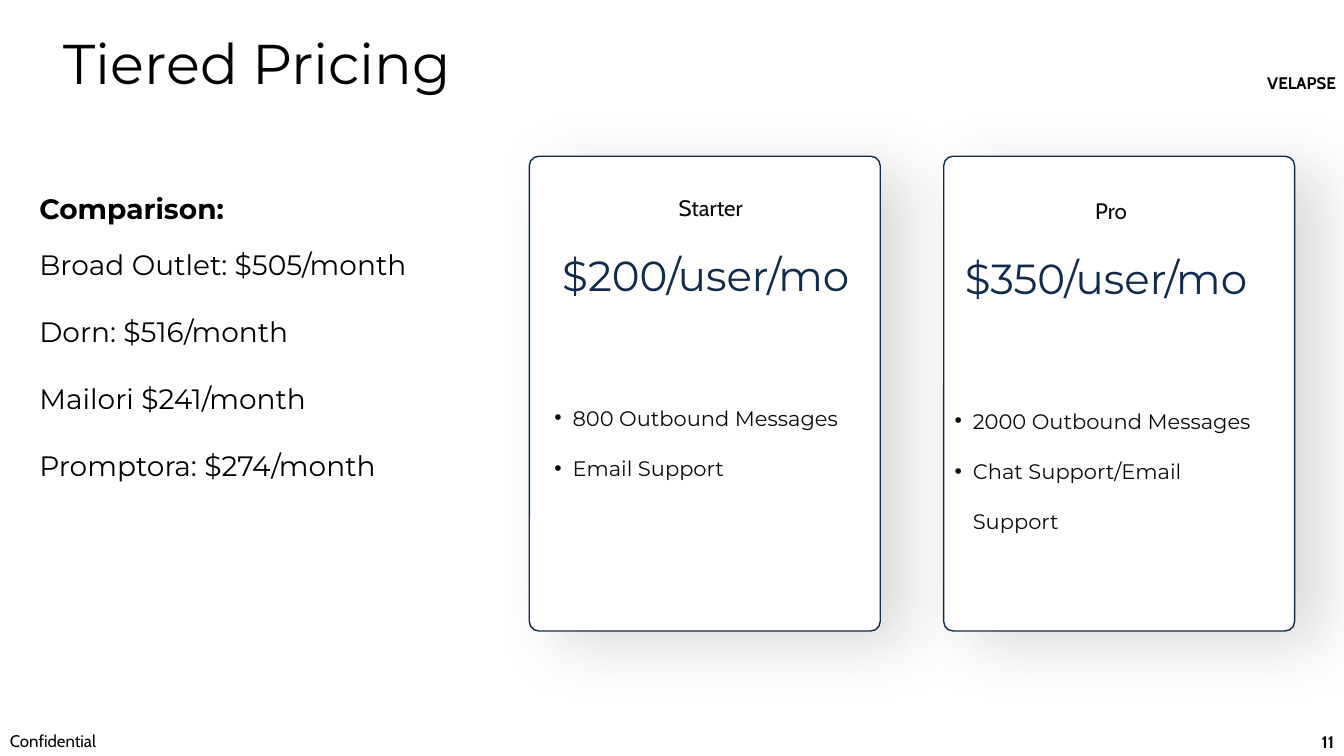
from lxml import etree
from pptx import Presentation
from pptx import util as u
from pptx.dml.color import RGBColor
from pptx.enum import shapes, text
from pptx.oxml import ns

HUES = {"black": "000000", "ink": "0C0C0C", "navy": "112B4E", "white": "FFFFFF", "shade": "262626"}
SANS, LABEL = "Montserrat", "Cabin"
LEFT, MID, RIGHT = text.PP_ALIGN.LEFT, text.PP_ALIGN.CENTER, text.PP_ALIGN.RIGHT


def hue(name):
    return RGBColor.from_string(HUES[name])


def add(parent, tag, **attrs):
    return etree.SubElement(parent, ns.qn(tag), attrs)


class Deck:
    def __init__(self):
        self.prs = Presentation()
        self.prs.slide_width = u.Inches(13.33)
        self.prs.slide_height = u.Inches(7.5)
        self.slide = self.prs.slides.add_slide(self.prs.slide_layouts[1])

    def place(self, shape, box):
        shape.left, shape.top, shape.width, shape.height = map(u.Inches, box)

    def style(self, para, size, face=SANS, color="black", bold=False, align=LEFT):
        para.alignment = align
        font = para.font
        font.size, font.name, font.bold = u.Pt(size), face, bold
        font.color.rgb = hue(color)

    def title(self, box, words):
        shape = self.slide.shapes.title
        self.place(shape, box)
        frame = shape.text_frame
        frame.text = words
        frame.auto_size = text.MSO_AUTO_SIZE.NONE
        frame.vertical_anchor = text.MSO_ANCHOR.TOP
        self.style(frame.paragraphs[0], 40)

    def body(self, box, head, rows):
        shape = self.slide.placeholders[1]
        self.place(shape, box)
        frame = shape.text_frame
        frame.text = "\n".join([head] + rows)
        frame.auto_size = text.MSO_AUTO_SIZE.NONE
        frame.margin_top = frame.margin_bottom = u.Inches(0.1)
        for i, para in enumerate(frame.paragraphs):
            props = para._p.get_or_add_pPr()
            props.set("marL", "0")
            props.set("indent", "0")
            add(props, "a:buNone")
            para.space_before = u.Pt((0, 16.3)[i] if i < 2 else 23.7)
            self.style(para, 20, bold=i == 0)

    def label(self, box, words, size, wrap=True, **look):
        frame = self.slide.shapes.add_textbox(*map(u.Inches, box)).text_frame
        frame.word_wrap = wrap
        frame.text = words
        self.style(frame.paragraphs[0], size, **look)
        return frame

    def bullets(self, box, rows):
        frame = self.slide.shapes.add_textbox(*map(u.Inches, box)).text_frame
        frame.word_wrap = True
        frame.text = "\n".join(rows)
        for para in frame.paragraphs:
            props = para._p.get_or_add_pPr()
            props.set("marL", str(u.Inches(0.19)))
            props.set("indent", str(u.Inches(-0.18)))
            tint = add(props, "a:buClr")
            add(tint, "a:srgbClr", val=HUES["ink"])
            add(props, "a:buFont", typeface="Arial")
            add(props, "a:buChar", char="•")
            para.line_spacing = 2.0
            self.style(para, 15, color="ink")

    def card(self, box):
        shape = self.slide.shapes.add_shape(
            shapes.MSO_SHAPE.ROUNDED_RECTANGLE, *map(u.Inches, box))
        shape.adjustments[0] = 0.027
        shape.fill.solid()
        shape.fill.fore_color.rgb = hue("white")
        shape.line.color.rgb = hue("navy")
        shape.line.width = u.Pt(1)
        shape.shadow.inherit = False
        glow = add(shape._element.spPr.find(ns.qn("a:effectLst")), "a:outerShdw",
                   blurRad=str(u.Pt(45)), dist=str(u.Pt(22)), dir=str(25 * 60000),
                   algn="ctr", rotWithShape="0")
        tint = add(glow, "a:srgbClr", val=HUES["shade"])
        add(tint, "a:alpha", val="17000")

    def plan(self, left, name, price, perks, drop, shift, tall):
        name_x, price_x, perk_x = shift
        self.card((left, 1.55, 3.48, 4.71))
        self.label((name_x, 1.88 + drop, 2.78, 0.37), name, 16,
                   face=LABEL, color="ink", align=MID)
        self.label((price_x, 2.43 + drop, 3.63, 1.11), price, 30, color="navy", align=MID)
        self.bullets((perk_x, 3.72 + drop, 3.33, tall), perks)


def main():
    deck = Deck()
    deck.title((0.53, 0.23, 7.21, 0.77), "Tiered Pricing")
    deck.body((0.29, 1.8, 4.18, 3.32), "Comparison:", [
        "Broad Outlet: $505/month", "Dorn: $516/month",
        "Mailori $241/month", "Promptora: $274/month"])
    deck.plan(5.25, "Starter", "$200/user/mo ",
              ["800 Outbound Messages", "Email Support"],
              0, (5.66, 5.24, 5.39), 0.86)
    deck.plan(9.36, "Pro", "$350/user/mo ",
              ["2000 Outbound Messages", "Chat Support/Email Support"],
              0.03, (9.63, 9.21, 9.36), 1.36)
    deck.label((12.47, 0.67, 0.95, 0.3), "VELAPSE", 12, wrap=False, face=LABEL, bold=True)
    deck.label((0, 7.2, 1.73, 0.3), "Confidential", 12, face=LABEL)
    page = deck.label((10.33, 7.16, 3, 0.4), "11", 12, face=LABEL, bold=True, align=RIGHT)
    page.vertical_anchor = text.MSO_ANCHOR.MIDDLE
    deck.prs.save("out.pptx")


if __name__ == "__main__":
    main()
